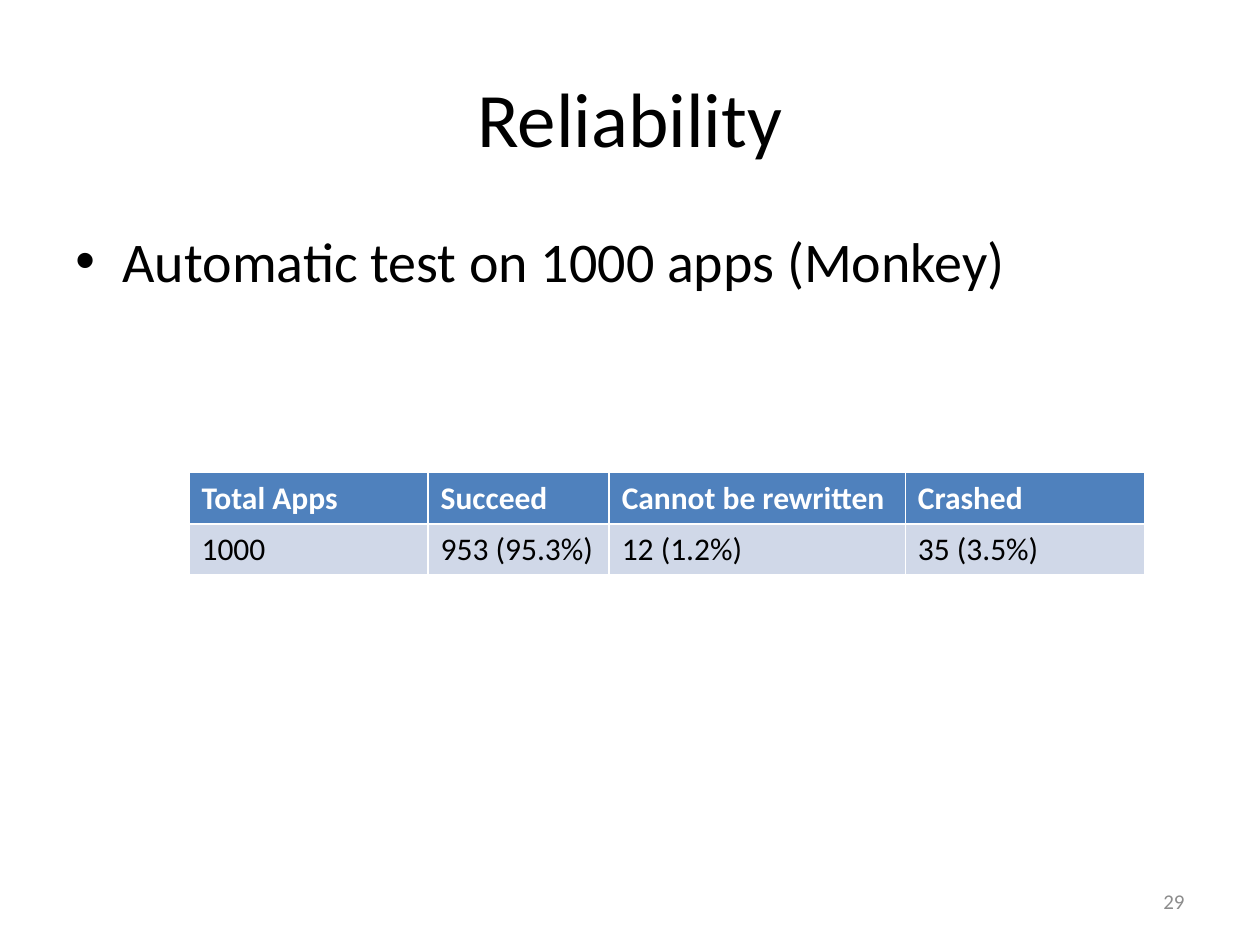
"""Build the Reliability slide with its app test results table."""
from lxml import etree
from pptx import Presentation
from pptx import util as u
from pptx.dml.color import RGBColor
from pptx.enum import text
from pptx.oxml.ns import qn

TITLE = "Reliability"
BULLET = "Automatic test on 1000 apps (Monkey)"
PAGE = "29"
RESULTS = [
    ("Total Apps", "Succeed", "Cannot be rewritten", "Crashed"),
    ("1000", "953 (95.3%)", "12 (1.2%)", "35 (3.5%)"),
]
COL_WIDTHS = (4.82, 3.65, 5.97, 4.82)
ROW_HEIGHT = 1.03
THEME = {
    "font": "Calibri",
    "ink": "000000", "light": "FFFFFF", "muted": "8C8C8C",
    "header": "4F81BD", "band": "D0D8E8",
    "title": 44, "body": 32, "cell": 18, "page": 12,
}


def write(tf, content, size="body", color="ink", bold=False,
          align=text.PP_ALIGN.LEFT, indent=0):
    p = tf.paragraphs[0]
    p.alignment = align
    if indent:
        pPr = p._p.get_or_add_pPr()
        pPr.set("marL", str(u.Cm(indent)))
        pPr.set("indent", str(-u.Cm(indent)))
        etree.SubElement(pPr, qn("a:buFont")).set("typeface", "Arial")
        etree.SubElement(pPr, qn("a:buChar")).set("char", "•")
    r = p.add_run()
    r.text = content
    r.font.name = THEME["font"]
    r.font.size = u.Pt(THEME[size])
    r.font.bold = bold
    r.font.color.rgb = RGBColor.from_string(THEME[color])


def add_text(s, content, box, anchor=text.MSO_ANCHOR.MIDDLE, **fmt):
    tf = s.shapes.add_textbox(*map(u.Cm, box)).text_frame
    tf.word_wrap = True
    tf.vertical_anchor = anchor
    write(tf, content, **fmt)


def add_results(s, left, top):
    size = sum(COL_WIDTHS), ROW_HEIGHT * len(RESULTS)
    table = s.shapes.add_table(len(RESULTS), len(COL_WIDTHS),
                               *map(u.Cm, (left, top, *size))).table
    for col, width in zip(table.columns, COL_WIDTHS):
        col.width = u.Cm(width)
    for i, values in enumerate(RESULTS):
        head = i == 0
        for j, value in enumerate(values):
            cell = table.cell(i, j)
            cell.fill.solid()
            fill = THEME["header" if head else "band"]
            cell.fill.fore_color.rgb = RGBColor.from_string(fill)
            write(cell.text_frame, value, size="cell", bold=head,
                  color="light" if head else "ink")


def main():
    prs = Presentation()
    prs.slide_width, prs.slide_height = u.Cm(25.4), u.Cm(19.05)
    s = prs.slides.add_slide(prs.slide_layouts[6])
    add_text(s, TITLE, (1.27, 0.76, 22.86, 3.18), size="title",
             align=text.PP_ALIGN.CENTER)
    add_text(s, BULLET, (1.27, 4.45, 22.86, 12.57),
             anchor=text.MSO_ANCHOR.TOP, indent=0.95)
    add_text(s, PAGE, (18.2, 17.66, 5.93, 1.01), size="page", color="muted",
             align=text.PP_ALIGN.RIGHT)
    add_results(s, 3.81, 9.53)
    prs.save("out.pptx")


if __name__ == "__main__":
    main()
